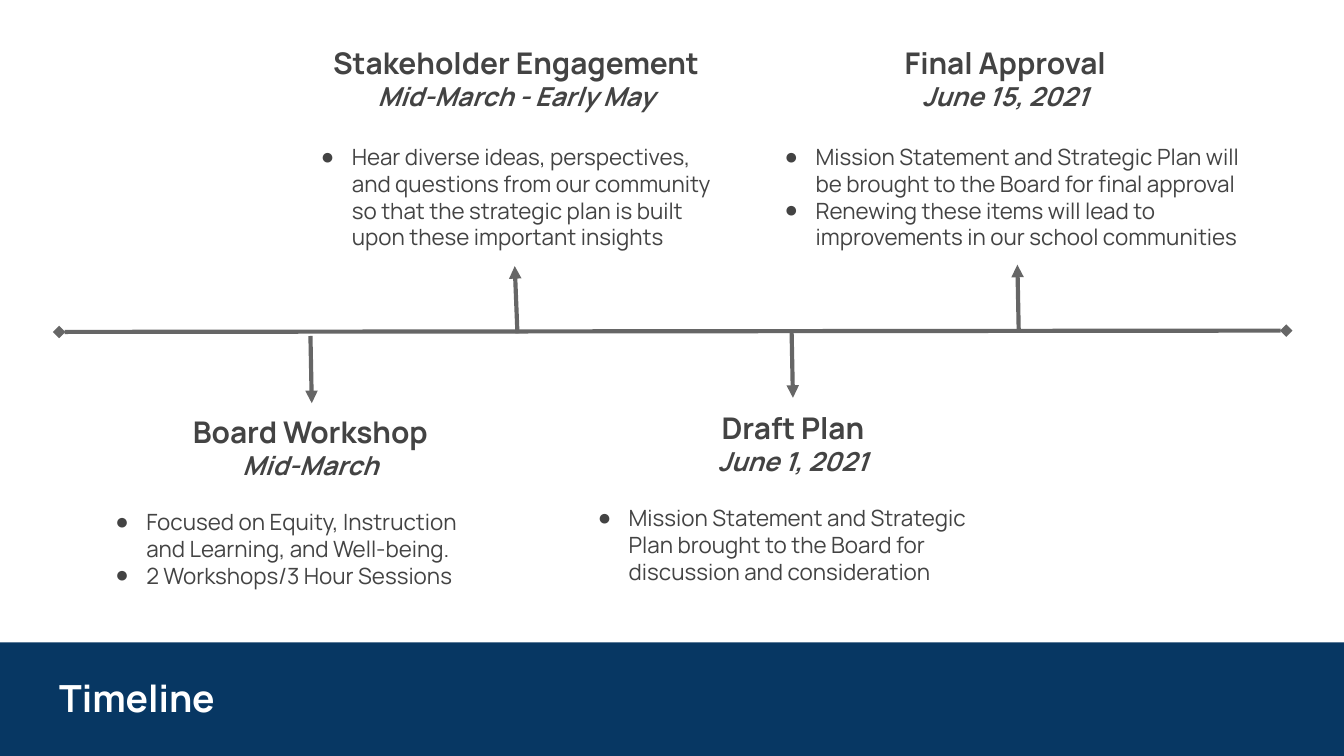
from lxml.etree import SubElement
from pptx import Presentation
from pptx.dml.color import RGBColor
from pptx.enum.shapes import MSO_CONNECTOR, MSO_SHAPE
from pptx.enum.text import MSO_ANCHOR, MSO_AUTO_SIZE, PP_ALIGN
from pptx.oxml.ns import qn
from pptx.util import Inches, Pt

NAVY, GRAY, TEXT, WHITE = "073763", "666666", "434343", "FFFFFF"
AXIS = (0.44, 2.47, 9.57, 2.46)

MILESTONES = [
    ("Board Workshop", "Mid-March",
     ["Focused on Equity, Instruction \nand Learning, and Well-being.",
      "2 Workshops/3 Hour Sessions"],
     (0.59, 2.98, 3.44, 1.52), 14.4, (2.31, 2.5, 2.32, 3)),
    ("Stakeholder Engagement", "Mid-March - Early May",
     ["Hear diverse ideas, perspectives, and questions from our community "
      "so that the strategic plan is built upon these important insights"],
     (2.12, 0.23, 3.44, 1.75), 16.8, (3.85, 2.48, 3.83, 1.98)),
    ("Draft Plan", "June 1, 2021",
     ["Mission Statement and Strategic Plan brought to the Board for "
      "discussion and consideration"],
     (4.18, 2.95, 3.44, 1.52), 14.4, (5.89, 2.46, 5.9, 2.96)),
    ("Final Approval", "June 15, 2021",
     ["Mission Statement and Strategic Plan will be brought to the Board "
      "for final approval",
      "Renewing these items will lead to improvements in our school "
      "communities"],
     (5.57, 0.23, 3.82, 1.75), 16.8, (7.58, 2.47, 7.57, 1.97)),
]


def rgb(color):
    """Turn a hex string into a colour."""
    return RGBColor.from_string(color)


def write(p, text, size=12, color=TEXT, bold=False, italic=False,
          align=PP_ALIGN.LEFT, before=0):
    """Write formatted text into a paragraph, breaking lines at newlines."""
    p.alignment = align
    p.space_before = Pt(before)
    for i, line in enumerate(text.split("\n")):
        if i:
            p.add_line_break()
        r = p.add_run()
        r.text = line
        r.font.name = "Manrope"
        r.font.size = Pt(size)
        r.font.bold = bold
        r.font.italic = italic
        r.font.color.rgb = rgb(color)


def add_bullet(p):
    """Give a paragraph a hanging round bullet."""
    pPr = p._p.get_or_add_pPr()
    pPr.set("marL", str(Inches(0.4)))
    pPr.set("indent", str(Inches(-0.23)))
    clr = SubElement(pPr, qn("a:buClr"))
    SubElement(clr, qn("a:srgbClr"), val=TEXT)
    SubElement(pPr, qn("a:buFont"), typeface="Arial")
    SubElement(pPr, qn("a:buChar"), char="●")


def set_frame(tf, anchor=MSO_ANCHOR.TOP):
    """Set wrapping, margins and anchor of a text frame."""
    tf.word_wrap = True
    tf.auto_size = MSO_AUTO_SIZE.NONE
    tf.vertical_anchor = anchor
    tf.margin_left = tf.margin_right = Inches(0.1)
    tf.margin_top = tf.margin_bottom = Inches(0.1)


def add_line(s, ends, **arrowheads):
    """Draw a gray line with the given headEnd and tailEnd types."""
    line = s.shapes.add_connector(MSO_CONNECTOR.STRAIGHT, *map(Inches, ends))
    line.line.color.rgb = rgb(GRAY)
    line.line.width = Pt(2.25)
    ln = line._element.spPr.find(qn("a:ln"))
    for tag, kind in arrowheads.items():
        SubElement(ln, qn(f"a:{tag}"), type=kind)
    SubElement(line._element.spPr, qn("a:effectLst"))


def add_milestone(s, heading, date, bullets, box, gap, arrow):
    """Add a milestone's text and its arrow from the axis."""
    add_line(s, arrow, tailEnd="triangle")
    tf = s.shapes.add_textbox(*map(Inches, box)).text_frame
    set_frame(tf)
    write(tf.paragraphs[0], heading, size=16, bold=True,
          align=PP_ALIGN.CENTER)
    write(tf.add_paragraph(), date, size=14, bold=True, italic=True,
          align=PP_ALIGN.CENTER)
    for i, text in enumerate(bullets):
        p = tf.add_paragraph()
        add_bullet(p)
        write(p, text, before=0 if i else gap)


def add_title_band(s, text):
    """Place the title on a navy band along the bottom."""
    title = s.shapes.title
    title.left, title.top = Inches(0.34), Inches(4.94)
    title.width, title.height = Inches(8.73), Inches(0.5)
    set_frame(title.text_frame, MSO_ANCHOR.MIDDLE)
    write(title.text_frame.paragraphs[0], text, size=20, color=WHITE,
          bold=True)
    band = s.shapes.add_shape(MSO_SHAPE.RECTANGLE, 0, Inches(4.78),
                              Inches(10), Inches(0.85))
    band.shadow.inherit = False
    band.fill.solid()
    band.fill.fore_color.rgb = rgb(NAVY)
    band.line.fill.background()
    title.element.addprevious(band.element)


def main():
    """Build the timeline slide."""
    prs = Presentation()
    prs.slide_width = Inches(10)
    prs.slide_height = prs.slide_width * 9 // 16
    s = prs.slides.add_slide(prs.slide_layouts[5])
    add_title_band(s, "Timeline")
    add_line(s, AXIS, headEnd="diamond", tailEnd="diamond")
    for milestone in MILESTONES:
        add_milestone(s, *milestone)
    prs.save("out.pptx")


if __name__ == "__main__":
    main()
